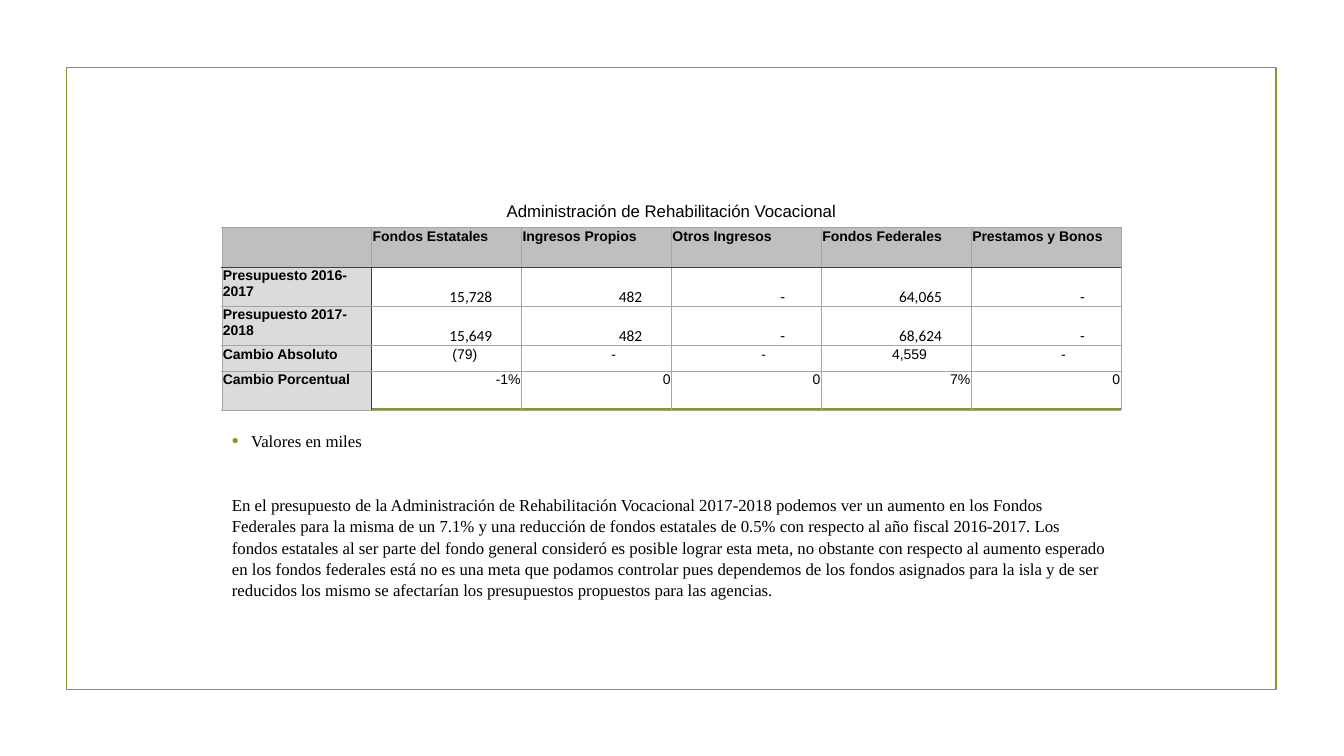
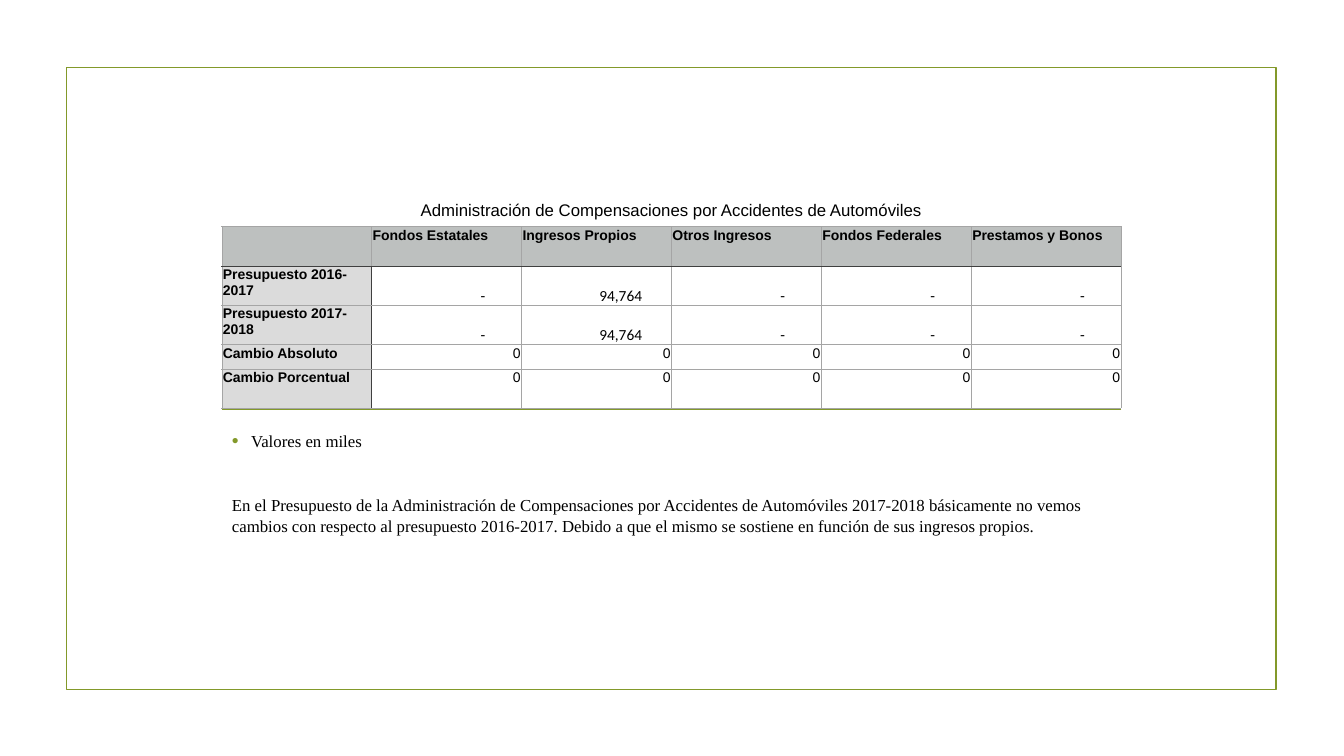
from lxml import etree
from pptx import Presentation
from pptx.dml.color import RGBColor
from pptx.enum.shapes import MSO_CONNECTOR as Line, MSO_SHAPE as Shape
from pptx.enum.text import MSO_ANCHOR as Anchor, MSO_AUTO_SIZE as Fit, PP_ALIGN as Align
from pptx.oxml import parse_xml
from pptx.oxml.ns import nsdecls, qn
from pptx.util import Inches, Pt

GREEN = RGBColor(0x83, 0x99, 0x2A)
BLACK = RGBColor(0, 0, 0)
WHITE = RGBColor(0xFF, 0xFF, 0xFF)
HEAD = RGBColor(0xBD, 0xC0, 0xBF)
SIDE = RGBColor(0xDB, 0xDB, 0xDB)
GRAY = RGBColor(0xA5, 0xA5, 0xA5)
DARK = RGBColor(0x3F, 0x3F, 0x3F)

FUNDS = ["Fondos Estatales", "Ingresos Propios", "Otros Ingresos",
         "Fondos Federales", "Prestamos y Bonos"]
LABELS = ["Presupuesto 2016-2017", "Presupuesto 2017-2018",
          "Cambio Absoluto", "Cambio Porcentual"]

CAPTION = {"name": "Arial", "size": Pt(12), "bold": False}
LABEL = {"name": "Arial", "size": Pt(10), "bold": True}
CHANGE = {"name": "Arial", "size": Pt(10), "bold": False}
AMOUNT = {"name": "Calibri", "size": Pt(11), "bold": False}
PROSE = {"name": "Times New Roman", "size": Pt(12), "bold": False}

PAD = 0.01
LEFT, WIDTH = 2.2, 8.92

AGENCIES = [
    {
        "name": "Administración de Rehabilitación Vocacional",
        "values": [["15,728", "482", "-", "64,065", "-"],
                   ["15,649", "482", "-", "68,624", "-"],
                   ["(79)", "-", "-", "4,559", "-"],
                   ["-1%", "0", "0", "7%", "0"]],
        "heights": [0.34, 0.39, 0.39, 0.39, 0.25, 0.39],
        "depth": 2.22,
        "prose": "En el presupuesto de la Administración de Rehabilitación Vocacional "
                 "2017-2018 podemos ver un aumento en los Fondos Federales para la misma "
                 "de un 7.1% y una reducción de fondos estatales de 0.5% con respecto al "
                 "año fiscal 2016-2017. Los fondos estatales al ser parte del fondo "
                 "general consideró es posible lograr esta meta, no obstante con respecto "
                 "al aumento esperado en los fondos federales está no es una meta que "
                 "podamos controlar pues dependemos de los fondos asignados para la isla y "
                 "de ser reducidos los mismo se afectarían los presupuestos propuestos "
                 "para las agencias.",
    },
    {
        "name": "Administración de Compensaciones por Accidentes de Automóviles",
        "values": [["-", "94,764", "-", "-", "-"]] * 2 + [["0"] * 5] * 2,
        "heights": [0.33, 0.39, 0.39, 0.39, 0.24, 0.39],
        "depth": 1.15,
        "prose": "En el Presupuesto de la Administración de Compensaciones por Accidentes "
                 "de Automóviles 2017-2018 básicamente no vemos cambios con respecto al "
                 "presupuesto 2016-2017. Debido a que el mismo se sostiene en función de "
                 "sus ingresos propios.",
    },
]


def style(font, look):
    for key, value in look.items():
        setattr(font, key, value)
    font.color.rgb = BLACK


def add_frame(slide):
    """Draw the green border and the rule under the table."""
    box = slide.shapes.add_shape(Shape.RECTANGLE, *map(Inches, (0.66, 0.67, 12, 6.17)))
    box.shadow.inherit = False
    box.fill.background()
    rule = slide.shapes.add_connector(
        Line.STRAIGHT, *map(Inches, (LEFT, 4.06, LEFT + WIDTH, 4.06)))
    etree.SubElement(rule._element.spPr, qn("a:effectLst"))
    for item in (box, rule):
        item.line.color.rgb = GREEN
        item.line.width = Pt(1.25)


def set_edges(cell, row, col):
    """Give a cell thin gray edges, dark where the values meet the labels."""
    dark = {"L": col == 1 and row > 1, "R": col == 0 and row > 1,
            "T": row == 2, "B": row == 1}
    props = cell._tc.get_or_add_tcPr()
    for side, deep in dark.items():
        if row == 0 and side != "B":
            continue
        color = DARK if deep else GRAY
        props.append(parse_xml(
            f'<a:ln{side} {nsdecls("a")} w="6350"><a:solidFill>'
            f'<a:srgbClr val="{color}"/></a:solidFill></a:ln{side}>'))


def set_fill(cell, row, col):
    color = HEAD if row == 1 else SIDE if col == 0 else WHITE if row in (2, 3) else None
    if row == 0 or color is None:
        cell.fill.background()
    else:
        cell.fill.solid()
        cell.fill.fore_color.rgb = color


def inset(row, text):
    """Return the right margin that lines up accounting figures."""
    if row in (2, 3):
        return 0.36 if text == "-" else 0.29
    if row == 4 and text != "0":
        return 0.55 if text == "-" else 0.44
    return PAD


def fill_cell(cell, row, col, text):
    cell.margin_left = cell.margin_top = cell.margin_right = Inches(PAD)
    cell.margin_bottom = 0
    set_edges(cell, row, col)
    set_fill(cell, row, col)
    if not text:
        return
    para = cell.text_frame.paragraphs[0]
    run = para.add_run()
    run.text = text
    look = LABEL
    if row == 0:
        look, para.alignment = CAPTION, Align.CENTER
        cell.vertical_anchor = Anchor.MIDDLE
    elif row > 1 and col > 0:
        look, para.alignment = CHANGE, Align.RIGHT
        cell.margin_right = Inches(inset(row, text))
        if row < 4:
            look, cell.vertical_anchor = AMOUNT, Anchor.BOTTOM
    style(run.font, look)


def add_budget(slide, agency, left, top, width):
    rows = [[agency["name"]] + [""] * len(FUNDS), [""] + FUNDS]
    rows += [[label] + vals for label, vals in zip(LABELS, agency["values"])]
    heights = agency["heights"]
    table = slide.shapes.add_table(
        len(rows), len(rows[0]),
        *map(Inches, (left, top, width, sum(heights)))).table
    table.first_row = table.horz_banding = False
    table.cell(0, 0).merge(table.cell(0, len(FUNDS)))
    for row, texts in enumerate(rows):
        table.rows[row].height = Inches(heights[row])
        for col, text in enumerate(texts):
            fill_cell(table.cell(row, col), row, col, text)


def set_bullet(para):
    props = para._p.get_or_add_pPr()
    props.set("marL", str(Inches(0.19)))
    props.set("indent", str(-Inches(0.19)))
    for tag in (f'<a:buClr {nsdecls("a")}><a:srgbClr val="{GREEN}"/></a:buClr>',
                f'<a:buSzPct {nsdecls("a")} val="115000"/>',
                f'<a:buFont {nsdecls("a")} typeface="Arial"/>',
                f'<a:buChar {nsdecls("a")} char="•"/>'):
        props.append(parse_xml(tag))


def clear_bullet(para):
    props = para._p.get_or_add_pPr()
    props.set("marL", "0")
    props.set("indent", "0")
    etree.SubElement(props, qn("a:buNone"))


def fill_body(body, prose, left, top, width, height):
    body.left, body.top, body.width, body.height = map(Inches, (left, top, width, height))
    frame = body.text_frame
    frame.word_wrap = True
    frame.auto_size = Fit.NONE
    frame.vertical_anchor = Anchor.TOP
    note, text = frame.paragraphs[0], frame.add_paragraph()
    set_bullet(note)
    clear_bullet(text)
    for para, words, gap in ((note, "Valores en miles", 0), (text, prose, 31)):
        para.alignment = Align.LEFT
        para.line_spacing = 1.05
        para.space_before, para.space_after = Pt(gap), Pt(0)
        run = para.add_run()
        run.text = words
        style(run.font, PROSE)


def add_agency(deck, agency):
    slide = deck.slides.add_slide(deck.slide_layouts[1])
    title = slide.shapes.title._element
    title.getparent().remove(title)
    add_frame(slide)
    fill_body(slide.placeholders[1], agency["prose"], LEFT, 4.21, WIDTH, agency["depth"])
    add_budget(slide, agency, LEFT, 1.92, WIDTH)


def main():
    deck = Presentation()
    deck.slide_width, deck.slide_height = Inches(13.33), Inches(7.5)
    for agency in AGENCIES:
        add_agency(deck, agency)
    deck.save("out.pptx")


if __name__ == "__main__":
    main()
